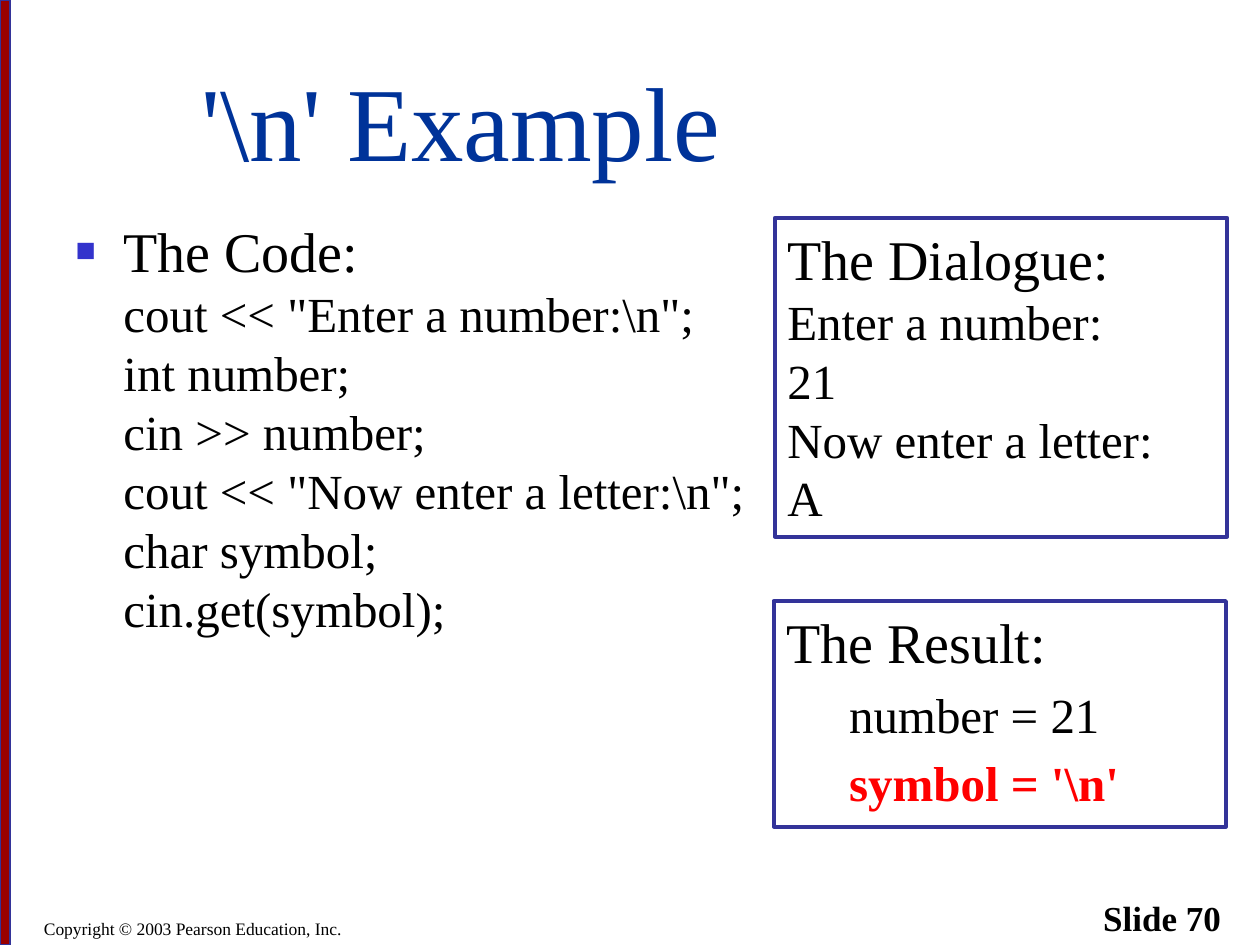
from copy import deepcopy
from lxml.etree import SubElement
from pptx import Presentation
from pptx.dml.color import RGBColor
from pptx.enum.shapes import MSO_SHAPE as SHAPE
from pptx.enum.text import MSO_ANCHOR as ANCHOR, MSO_AUTO_SIZE as AUTO, PP_ALIGN as ALIGN
from pptx.oxml.ns import qn
from pptx.util import Inches, Pt

COLORS = {"black": "000000", "title": "003399", "bar": "990000",
          "border": "333399", "bullet": "3333CC", "accent": "FF0000"}
FONT = "Times New Roman"
HEAD, TEXT = 32, 28

TITLE = r"'\n' Example"
CODE = ["The Code:", r'cout << "Enter a number:\n";', "int number;", "cin >> number;",
        r'cout << "Now enter a letter:\n";', "char symbol;", "cin.get(symbol);"]
DIALOGUE = ["The Dialogue:", "Enter a number:", "21", "Now enter a letter:", "A"]
RESULT = ["The Result:", "number = 21", r"symbol = '\n'"]
FOOTERS = [
    ("Copyright © 2003 Pearson Education, Inc.", (0.25, 7, 8.28, 0.5), 10, False, ALIGN.LEFT),
    ("Slide 70", (7.71, 7, 2.08, 0.5), 20, True, ALIGN.RIGHT),
]
PANELS = [("dialogue", (6.15, 1.73, 3.59, 2.53)), ("result", (6.14, 4.77, 3.59, 1.79))]


def rgb(name):
    return RGBColor.from_string(COLORS[name])


def place(sp, box):
    sp.left, sp.top, sp.width, sp.height = map(Inches, box)


def style(r, size, color="black", bold=False):
    r.font.name, r.font.size, r.font.bold = FONT, Pt(size), bold
    r.font.color.rgb = rgb(color)


def setup(tf, anchor=ANCHOR.TOP):
    tf.word_wrap, tf.auto_size, tf.vertical_anchor = True, AUTO.NONE, anchor


def add_lines(p, lines):
    p.alignment, p.space_before = ALIGN.LEFT, Pt(0)
    p.text = "\v".join(lines)
    for i, r in enumerate(p.runs):
        style(r, TEXT if i else HEAD)
    for br, r in zip(p._p.findall(qn("a:br")), p.runs):
        br.append(deepcopy(r.font._element))


def add_bullet(p):
    pPr = p._p.get_or_add_pPr()
    pPr.set("marL", str(Inches(0.38)))
    pPr.set("indent", str(Inches(-0.38)))
    color = SubElement(pPr, qn("a:buClr"))
    SubElement(color, qn("a:srgbClr"), val=COLORS["bullet"])
    SubElement(pPr, qn("a:buSzPct"), val="60000")
    SubElement(pPr, qn("a:buFont"), typeface=FONT)
    SubElement(pPr, qn("a:buChar"), char="■")


def add_rect(s, box, line_width):
    sp = s.shapes.add_shape(SHAPE.RECTANGLE, *map(Inches, box))
    sp.shadow.inherit = False
    sp.fill.background()
    sp.line.color.rgb, sp.line.width = rgb("border"), Pt(line_width)
    return sp


def add_result(tf):
    add_lines(tf.paragraphs[0], RESULT[:1])
    for text, color, bold in zip(RESULT[1:], ("black", "accent"), (False, True)):
        p = tf.add_paragraph()
        p.text, p.alignment, p.level = text, ALIGN.LEFT, 1
        p._p.get_or_add_pPr().set("marL", str(Inches(0.5)))
        p.space_before = Pt(TEXT * 0.2)
        style(p.runs[0], TEXT, color, bold)


def main():
    """Build the newline example slide."""
    prs = Presentation()
    prs.slide_width, prs.slide_height = Inches(10), Inches(7.5)
    s = prs.slides.add_slide(prs.slide_layouts[1])

    bar = add_rect(s, (0, 0, 0.08, 7.5), 0.75)
    bar.fill.solid()
    bar.fill.fore_color.rgb = rgb("bar")

    for text, box, size, bold, align in FOOTERS:
        tf = s.shapes.add_textbox(*map(Inches, box)).text_frame
        setup(tf, ANCHOR.BOTTOM)
        p = tf.paragraphs[0]
        p.text, p.alignment = text, align
        style(p.runs[0], size, bold=bold)

    title, body = s.placeholders
    place(title, (1.5, 0.08, 8.42, 1.42))
    setup(title.text_frame, ANCHOR.BOTTOM)
    p = title.text_frame.paragraphs[0]
    p.text, p.alignment = TITLE, ALIGN.LEFT
    style(p.runs[0], 60, "title")

    place(body, (0.5, 1.67, 9.24, 5))
    setup(body.text_frame)
    p = body.text_frame.paragraphs[0]
    add_lines(p, CODE)
    add_bullet(p)

    for name, box in PANELS:
        tf = add_rect(s, box, 2.25).text_frame
        setup(tf)
        if name == "dialogue":
            add_lines(tf.paragraphs[0], DIALOGUE)
        else:
            add_result(tf)

    prs.save("out.pptx")


if __name__ == "__main__":
    main()
